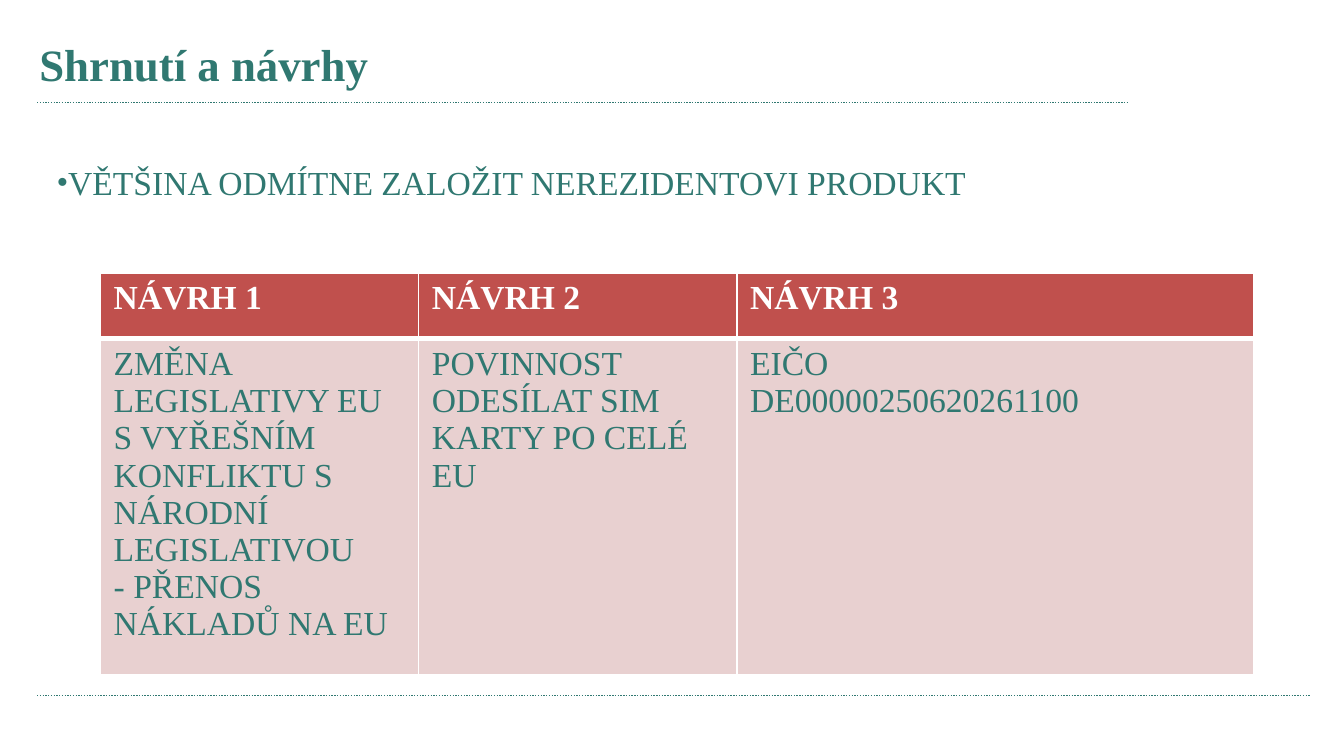
from pptx import Presentation
from pptx.dml.color import RGBColor as RGB
from pptx.enum.dml import MSO_LINE
from pptx.enum.shapes import MSO_CONNECTOR
from pptx.enum.text import MSO_ANCHOR as ANCHOR
from pptx.oxml import parse_xml
from pptx.oxml.ns import nsdecls
from pptx.util import Inches, Pt

FONT = "Times New Roman"
COLORS = {"teal": "307871", "red": "C0504D", "pink": "E8D0D0", "white": "FFFFFF"}
W = Inches(10)
H = W * 9 // 16

PROPOSALS = {
    "NÁVRH 1": ["ZMĚNA LEGISLATIVY EU S VYŘEŠNÍM KONFLIKTU S NÁRODNÍ LEGISLATIVOU",
                "- PŘENOS NÁKLADŮ NA EU"],
    "NÁVRH 2": ["POVINNOST ODESÍLAT SIM KARTY PO CELÉ EU"],
    "NÁVRH 3": ["EIČO", "DE00000250620261100"],
}


def share_box(left, top, width, height):
    """Turn percentages of the slide into lengths."""
    return [int(size * pct / 100)
            for size, pct in zip((W, H, W, H), (left, top, width, height))]


def color(name):
    return RGB.from_string(COLORS[name])


def add_bullet(p, char, fill):
    pPr = p._p.get_or_add_pPr()
    pPr.set("marL", "0")
    pPr.set("indent", "0")
    for xml in (f'<a:buClr {nsdecls("a")}><a:srgbClr val="{COLORS[fill]}"/></a:buClr>',
                f'<a:buFont {nsdecls("a")} typeface="{FONT}"/>',
                f'<a:buChar {nsdecls("a")} char="{char}"/>'):
        pPr.append(parse_xml(xml))


def write(tf, lines, size=18, fill="teal", bold=False, bullet=None, anchor=None):
    tf.word_wrap = True
    if anchor is not None:
        tf.vertical_anchor = anchor
    for i, line in enumerate(lines):
        p = tf.add_paragraph() if i else tf.paragraphs[0]
        if bullet:
            add_bullet(p, bullet, fill)
        r = p.add_run()
        r.text = line
        r.font.name, r.font.size, r.font.bold = FONT, Pt(size), bold
        r.font.color.rgb = color(fill)


def add_text(s, box, lines, **fmt):
    write(s.shapes.add_textbox(*box).text_frame, lines, **fmt)


def add_rule(s, box):
    x, y, w, h = box
    line = s.shapes.add_connector(MSO_CONNECTOR.STRAIGHT, x, y, x + w, y + h)
    line.line.color.rgb = color("teal")
    line.line.width = Pt(0.75)
    line.line.dash_style = MSO_LINE.ROUND_DOT
    line._element.spPr.append(parse_xml(f'<a:effectLst {nsdecls("a")}/>'))


def set_borders(cell, **widths):
    tcPr = cell._tc.get_or_add_tcPr()
    for i, side in enumerate("LRTB"):
        tcPr.insert(i, parse_xml(
            f'<a:ln{side} {nsdecls("a")} w="{Pt(widths.get(side, 1))}"><a:solidFill>'
            f'<a:srgbClr val="{COLORS["white"]}"/></a:solidFill></a:ln{side}>'))


def add_heading(s, box):
    add_text(s, box, ["Shrnutí a návrhy"], size=24, bold=True, anchor=ANCHOR.MIDDLE)


def add_finding(s, box):
    add_text(s, box, ["VĚTŠINA ODMÍTNE ZALOŽIT NEREZIDENTOVI PRODUKT"], bullet="•")


def add_proposals(s, box):
    frame = s.shapes.add_table(2, len(PROPOSALS), *box)
    table = frame.table
    for col, pct in zip(table.columns, (27.6, 27.6, 44.8)):
        col.width = int(box[2] * pct / 100)
    for row, pct in zip(table.rows, (16.4, 76.3)):
        row.height = int(box[3] * pct / 100)
    frame.height = box[3]
    for c, (head, body) in enumerate(PROPOSALS.items()):
        # Header and body share a thick white divider
        for r, (lines, back, fmt, thick) in enumerate((
                ([head], "red", {"fill": "white", "bold": True}, {"B": 3}),
                (body, "pink", {}, {"T": 3}))):
            cell = table.cell(r, c)
            cell.fill.solid()
            cell.fill.fore_color.rgb = color(back)
            set_borders(cell, **thick)
            write(cell.text_frame, lines, **fmt)


def main():
    prs = Presentation()
    prs.slide_width, prs.slide_height = W, H
    s = prs.slides.add_slide(prs.slide_layouts[6])

    # Dotted rules under the heading and above the foot
    add_rule(s, share_box(2.76, 13.6, 81.1, 0))
    add_rule(s, share_box(2.76, 92, 94.7, 0))

    # Content
    add_finding(s, share_box(3.22, 20.6, 94.8, 65.8))
    add_heading(s, share_box(1.95, 3.4, 64.6, 10))
    add_proposals(s, share_box(7.46, 36.1, 85.8, 53.2))

    prs.save("out.pptx")


if __name__ == "__main__":
    main()
